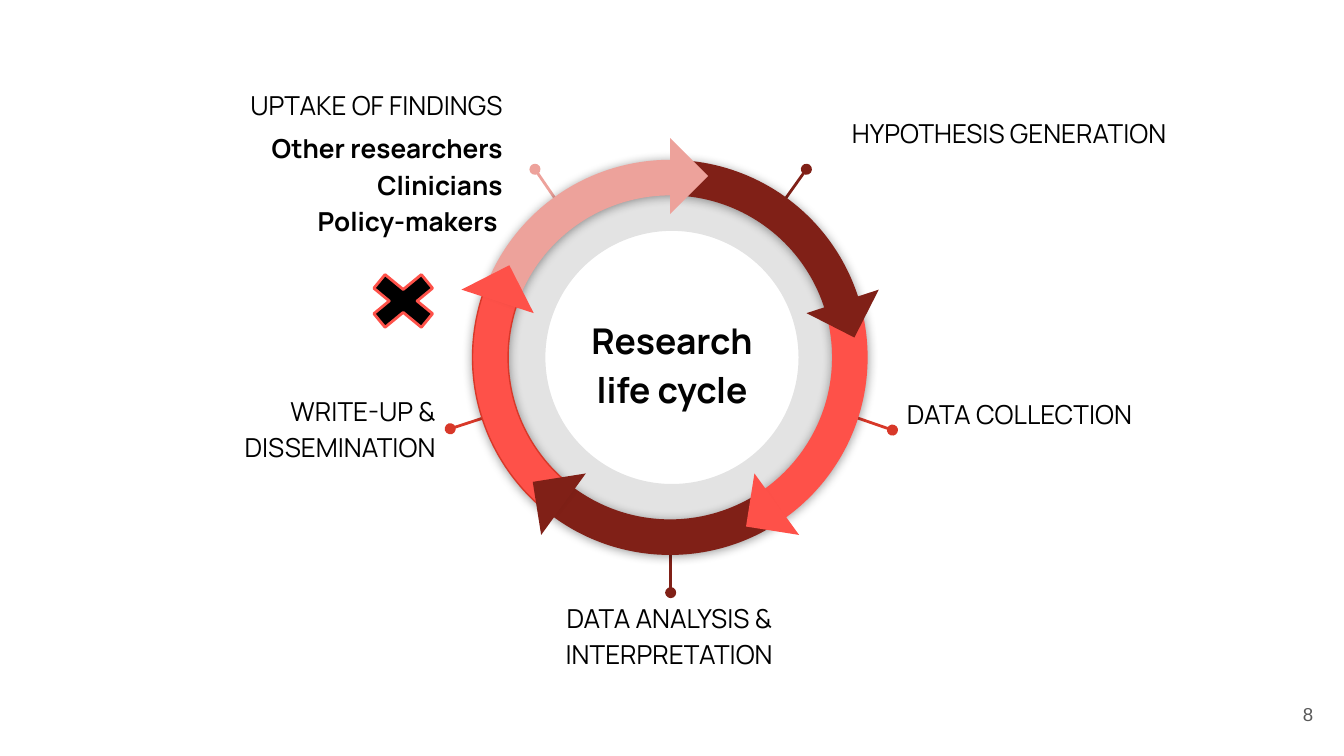
from dataclasses import dataclass
from math import cos, radians, sin

from lxml.etree import SubElement
from pptx import Presentation
from pptx.dml.color import RGBColor
from pptx.enum.shapes import MSO_CONNECTOR, MSO_SHAPE
from pptx.enum.text import MSO_ANCHOR, MSO_AUTO_SIZE, PP_ALIGN
from pptx.oxml.ns import qn
from pptx.util import Pt


@dataclass(frozen=True)
class Theme:
    font: str = "Manrope"
    number_font: str = "Arial"
    label_size: float = 14
    title_size: float = 19
    number_size: float = 10
    black: str = "000000"
    title: str = "020202"
    grey: str = "595959"
    dark: str = "802017"
    red: str = "FE5149"
    deep_red: str = "D83829"
    pink: str = "EDA29B"


THEME = Theme()
LEFT, CENTER, RIGHT = PP_ALIGN.LEFT, PP_ALIGN.CENTER, PP_ALIGN.RIGHT
CENTER_X, CENTER_Y = 359, 191.5
RING_SIZE, RING_THICKNESS = 211.7, 0.09
HEAD_SIZE, HEAD_RADIUS = 28.8, 97.2
STEP, SEAM = 72, 3
INSET = 7.2

STAGES = [
    (THEME.dark, None),
    (THEME.red, None),
    (THEME.dark, None),
    (THEME.red, THEME.deep_red),
    (THEME.pink, None),
]

PINS = [
    (THEME.dark, (432, 90.7), (410.4, 121)),
    (THEME.pink, (286.6, 90.7), (307.4, 121)),
    (THEME.deep_red, (478.1, 230.4), (442.8, 218.2)),
    (THEME.deep_red, (241.2, 229.7), (276.5, 218.2)),
    (THEME.dark, (359.3, 317.5), (359.3, 278.6)),
]

LABELS = [
    ((449.3, 53.3, 196.6, 52.6), LEFT, "HYPOTHESIS GENERATION", []),
    ((87.1, 38.2, 189.4, 52.6), RIGHT, "UPTAKE OF FINDINGS",
     ["Other researchers", "Clinicians", "Policy-makers "]),
    ((478.8, 203.8, 173.5, 52.6), LEFT, "DATA COLLECTION", []),
    ((71.3, 202.3, 169.2, 52.6), RIGHT, "WRITE-UP & DISSEMINATION", []),
    ((281.5, 313.2, 154.1, 52.6), CENTER, "DATA ANALYSIS & INTERPRETATION", []),
]


def rgb(color):
    return RGBColor.from_string(color)


def add_alpha(color_element, percent):
    SubElement(color_element, qn("a:alpha"), val=str(percent * 1000))


def prepare_frame(box, anchor=MSO_ANCHOR.TOP):
    frame = box.text_frame
    frame.word_wrap = True
    frame.auto_size = MSO_AUTO_SIZE.NONE
    frame.vertical_anchor = anchor
    frame.margin_left = frame.margin_right = Pt(INSET)
    frame.margin_top = frame.margin_bottom = Pt(INSET)
    return frame


def write(para, text, align, size, color, bold=False, font=THEME.font, spacing=1.15):
    para.alignment = align
    para.line_spacing = spacing
    span = para.add_run()
    span.text = text
    span.font.name = font
    span.font.size = Pt(size)
    span.font.bold = bold
    span.font.color.rgb = rgb(color)


def add_shape(page, kind, left, top, width, height, fill, line=None, weight=0.75):
    shape = page.shapes.add_shape(kind, Pt(left), Pt(top), Pt(width), Pt(height))
    shape.shadow.inherit = False
    shape.fill.solid()
    shape.fill.fore_color.rgb = rgb(fill)
    if line:
        shape.line.color.rgb = rgb(line)
        shape.line.width = Pt(weight)
    else:
        shape.line.fill.background()
    return shape


def add_hub(page):
    size = 200
    hub = add_shape(page, MSO_SHAPE.DONUT, 360 - size / 2, CENTER_Y - size / 2,
                    size, size, THEME.black)
    hub.adjustments[0] = 0.161
    add_alpha(hub.element.spPr.find(qn("a:solidFill"))[0], 11)


def add_shadow(shape):
    effects = shape.element.spPr.find(qn("a:effectLst"))
    shadow = SubElement(effects, qn("a:outerShdw"), blurRad=str(Pt(5.6)),
                        dist=str(Pt(0.8)), dir="5400000", rotWithShape="0")
    add_alpha(SubElement(shadow, qn("a:srgbClr"), val=THEME.black), 40)


def add_arc(page, start, fill, line):
    arc = add_shape(page, MSO_SHAPE.BLOCK_ARC, CENTER_X - RING_SIZE / 2,
                    CENTER_Y - RING_SIZE / 2, RING_SIZE, RING_SIZE, fill, line)
    arc.adjustments[0] = start % 360 * 0.6
    arc.adjustments[1] = (start + STEP) % 360 * 0.6
    arc.adjustments[2] = RING_THICKNESS
    add_shadow(arc)


def add_arrowhead(page, angle, fill):
    x = CENTER_X + HEAD_RADIUS * cos(radians(angle))
    y = CENTER_Y + HEAD_RADIUS * sin(radians(angle))
    head = add_shape(page, MSO_SHAPE.RIGHT_TRIANGLE, x - HEAD_SIZE / 2,
                     y - HEAD_SIZE / 2, HEAD_SIZE, HEAD_SIZE, fill)
    head.rotation = (angle - 45) % 360


def add_cycle(page):
    for index, (fill, line) in enumerate(STAGES):
        add_arc(page, 270 + index * STEP + SEAM, fill, line)
    for index, (fill, _) in enumerate(STAGES):
        add_arrowhead(page, 270 + (index + 1) * STEP, fill)


def add_pin(page, color, start, end):
    pin = page.shapes.add_connector(
        MSO_CONNECTOR.STRAIGHT, *(Pt(value) for value in start + end))
    pin.line.color.rgb = rgb(color)
    pin.line.width = Pt(1.5)
    properties = pin._element.spPr
    SubElement(properties.find(qn("a:ln")), qn("a:headEnd"), type="oval")
    SubElement(properties, qn("a:effectLst"))


def add_label(page, place, align, heading, audiences):
    box = page.shapes.add_textbox(*(Pt(value) for value in place))
    frame = prepare_frame(box)
    write(frame.paragraphs[0], heading, align, THEME.label_size, THEME.black)
    for index, audience in enumerate(audiences):
        para = frame.add_paragraph()
        para.space_before = Pt(0 if index else 4)
        write(para, audience, align, THEME.label_size, THEME.black, bold=True)


def set_title(page, text):
    title = page.shapes.title
    title.left, title.top, title.width, title.height = (
        Pt(value) for value in (303.1, 162, 113.8, 63.4))
    frame = prepare_frame(title, MSO_ANCHOR.MIDDLE)
    write(frame.paragraphs[0], text, CENTER, THEME.title_size, THEME.title, bold=True)


def add_page_number(page, number):
    box = page.shapes.add_textbox(Pt(667.4), Pt(367.2), Pt(43.2), Pt(31))
    frame = prepare_frame(box, MSO_ANCHOR.MIDDLE)
    write(frame.paragraphs[0], number, RIGHT, THEME.number_size, THEME.grey,
          font=THEME.number_font, spacing=1.0)


def add_cross(page):
    cross = add_shape(page, MSO_SHAPE.MATH_MULTIPLY, 191.5, 141.1, 49, 40.3,
                      THEME.black, THEME.red, 1.5)
    cross.adjustments[0] = 0.235


def main():
    deck = Presentation()
    deck.slide_width, deck.slide_height = Pt(720), Pt(405)
    page = deck.slides.add_slide(deck.slide_layouts[5])
    set_title(page, "Research life cycle")
    add_page_number(page, "8")
    add_hub(page)
    for pin in PINS:
        add_pin(page, *pin)
    for label in LABELS:
        add_label(page, *label)
    add_cycle(page)
    add_cross(page)
    deck.save("out.pptx")


if __name__ == "__main__":
    main()
